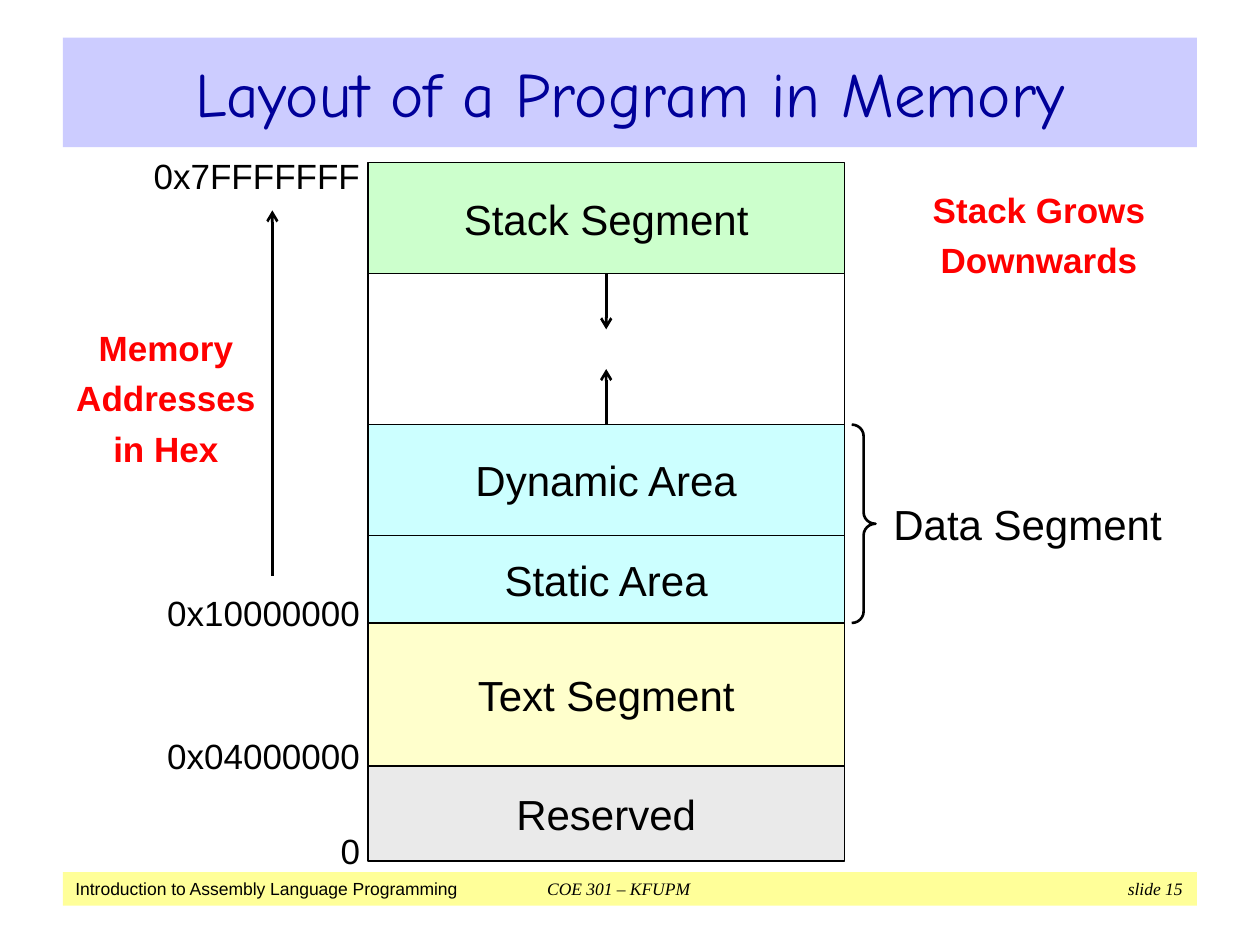
"""Build the slide on the layout of a program in memory."""
from lxml import etree
from pptx import Presentation
from pptx.dml.color import RGBColor
from pptx.enum import shapes, text
from pptx.oxml.ns import qn
from pptx.util import Cm, Pt

HUES = {"ink": "000000", "navy": "000099", "lilac": "CCCCFF", "lemon": "FFFF99",
        "green": "CCFFCC", "cyan": "CCFFFF", "cream": "FFFFCC", "grey": "EAEAEA",
        "red": "FF0000"}
STACK = [("Stack Segment", 2.24, "green", ""),
         ("", 3.04, None, ""),
         ("Dynamic Area", 2.24, "cyan", ""),
         ("Static Area", 1.76, "cyan", "0x10000000"),
         ("Text Segment", 2.88, "cream", "0x04000000"),
         ("Reserved", 1.92, "grey", "0")]
TOP_LABEL = "0x7FFFFFFF"
NOTES = [(["Memory", "Addresses", "in Hex"], (1.35, 6.17, 3.99, 3.53)),
         (["Stack Grows", "Downwards"], (18.62, 3.45, 4.65, 2.39))]
FOOT = [("Introduction to Assembly Language Programming", "Arial", False),
        ("\tCOE 301 – KFUPM\tslide 15", "Times New Roman", True)]
TABS = [(10.95, "ctr"), (22.32, "r")]
LEFT, TOP, WIDTH = 7.42, 3.28, 9.6
MID = LEFT + WIDTH / 2
BODY = {"size": Pt(24), "name": "Arial"}
LABEL = {"size": Pt(20), "name": "Arial"}
NOTE = LABEL | {"bold": True}
HEAD = {"size": Pt(36), "name": "Comic Neue"}
ALIGN = text.PP_ALIGN
MIDDLE = text.MSO_ANCHOR.MIDDLE

deck = Presentation()
deck.slide_width, deck.slide_height = Cm(25.4), Cm(19.05)
slide = deck.slides.add_slide(deck.slide_layouts[6])


def rgb(hue):
    return RGBColor.from_string(HUES[hue])


def style(font, form, hue="ink"):
    for key, val in form.items():
        setattr(font, key, val)
    font.color.rgb = rgb(hue)


def write(shape, lines, form, hue="ink", align=ALIGN.CENTER, anchor=MIDDLE, gap=None):
    frame = shape.text_frame
    setup = {"word_wrap": True, "vertical_anchor": anchor, "margin_left": 0,
             "margin_right": 0, "margin_top": 0, "margin_bottom": 0}
    for key, val in setup.items():
        setattr(frame, key, val)
    for i, line in enumerate(lines):
        para = frame.paragraphs[0] if i == 0 else frame.add_paragraph()
        para.alignment, para.line_spacing = align, gap
        run = para.add_run()
        run.text = line
        style(run.font, form, hue)


def shape(kind, box, fill=None, width=None):
    item = slide.shapes.add_shape(kind, *map(Cm, box))
    item.shadow.inherit = False
    if fill:
        item.fill.solid()
        item.fill.fore_color.rgb = rgb(fill)
    else:
        item.fill.background()
    if width:
        item.line.color.rgb = rgb("ink")
        item.line.width = Pt(width)
    else:
        item.line.fill.background()
    return item


def note(box, *args, **form):
    write(slide.shapes.add_textbox(*map(Cm, box)), *args, **form)


def arrow(x, start, end):
    line = slide.shapes.add_connector(shapes.MSO_CONNECTOR.STRAIGHT,
                                      Cm(x), Cm(start), Cm(x), Cm(end))
    line.line.color.rgb = rgb("ink")
    line.line.width = Pt(1.5)
    etree.SubElement(line.line._get_or_add_ln(), qn("a:tailEnd"), type="arrow")
    etree.SubElement(line._element.spPr, qn("a:effectLst"))
    return line


def label(name, top):
    note((2.94, top, 4.32, 0.8), [name], LABEL, align=ALIGN.RIGHT,
         anchor=text.MSO_ANCHOR.TOP)


RECT = shapes.MSO_SHAPE.RECTANGLE
foot = shape(RECT, (1.27, 17.58, 22.86, 0.68), "lemon")
foot.text_frame.vertical_anchor = text.MSO_ANCHOR.TOP
para = foot.text_frame.paragraphs[0]
para.alignment = ALIGN.LEFT
stops = etree.SubElement(para._p.get_or_add_pPr(), qn("a:tabLst"))
for pos, side in TABS:
    etree.SubElement(stops, qn("a:tab"), pos=str(Cm(pos)), algn=side)
for words, face, slant in FOOT:
    run = para.add_run()
    run.text = words
    style(run.font, {"size": Pt(10), "name": face, "italic": slant})

write(shape(RECT, (1.27, 0.76, 22.86, 2.21), "lilac"),
      ["Layout of a Program in Memory"], HEAD, "navy")

label(TOP_LABEL, TOP - 0.16)
parts, tops, y = [], [], TOP
for name, high, fill, mark in STACK:
    part = shape(RECT, (LEFT, y, WIDTH, high), fill, 0.75)
    if name:
        write(part, [name], BODY)
    parts.append(part)
    tops.append(y)
    y += high
    if mark:
        label(mark, y - 0.64)

data = tops[4] - tops[2]
brace = shape(shapes.MSO_SHAPE.RIGHT_BRACE, (17.17, tops[2], 0.48, data), width=1.5)
brace.adjustments[0] = 0.48
note((17.83, tops[2] + data / 2 - 1.52, 5.77, 3.04), ["Data Segment"], BODY)

arrow(MID, tops[2], tops[2] - 1.12).begin_connect(parts[2], 0)
arrow(MID, tops[1], tops[1] + 1.12).begin_connect(parts[0], 2)
arrow(5.49, 11.61, 4.24)

for lines, box in NOTES:
    note(box, lines, NOTE, hue="red", gap=1.2)

deck.save("out.pptx")
